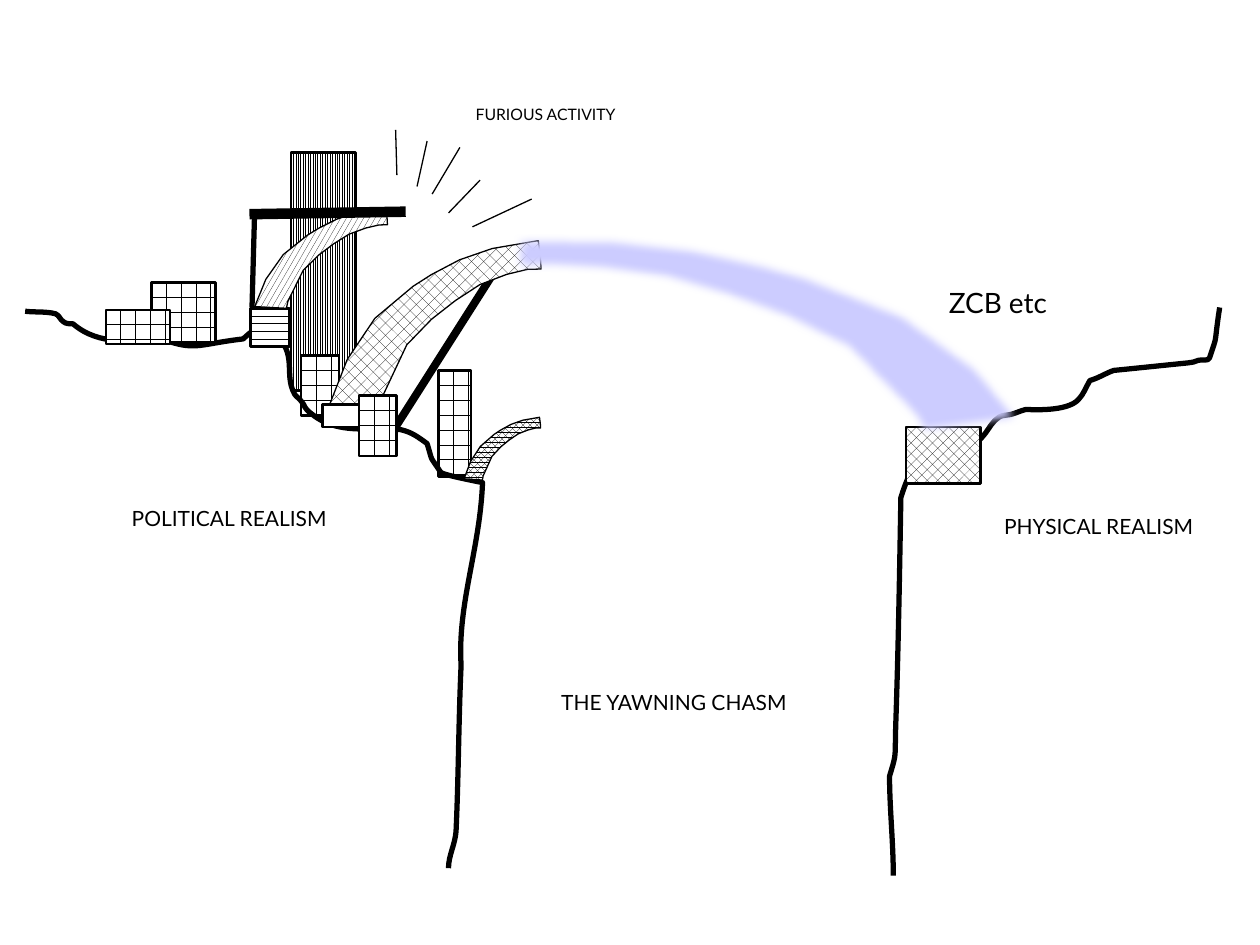
from lxml.etree import SubElement
from pptx import Presentation
from pptx.dml.color import RGBColor
from pptx.enum.dml import MSO_PATTERN
from pptx.enum.shapes import MSO_CONNECTOR, MSO_SHAPE
from pptx.enum.text import MSO_ANCHOR, PP_ALIGN
from pptx.oxml.ns import qn
from pptx.util import Inches, Pt

BLACK = RGBColor(0, 0, 0)
WHITE = RGBColor(255, 255, 255)
LILAC = RGBColor(0xCC, 0xCC, 0xFF)
BRICK = MSO_PATTERN.HORIZONTAL_BRICK
TILT = -3.4

# Half arch in percent of its box, rising from the left foot to the right tip
ARCH = [
    (0, 96.2), (9.3, 68.1), (23, 43.1), (41.3, 24.2), (49.8, 17.6),
    (63.1, 9.2), (78.3, 3.3), (99.5, 0), (100, 10.4), (100, 18.1),
    (93.8, 17.8), (84.2, 20.2), (71.7, 25.7), (60.1, 34.9), (48.8, 45.8),
    (36.8, 61.1), (24.3, 93), (23, 100),
]

# Cliff edges: a start point, then three points for each curve
LEFT = [
    (0.2, 2.47),
    (0.28, 2.48), (0.36, 2.47), (0.44, 2.49),
    (0.47, 2.5), (0.48, 2.54), (0.5, 2.55),
    (0.52, 2.57), (0.55, 2.57), (0.58, 2.57),
    (0.79, 2.75), (1.05, 2.7), (1.34, 2.71),
    (1.56, 2.78), (1.59, 2.73), (1.93, 2.69),
    (2.01, 2.62), (2.01, 2.6), (2.14, 2.65),
    (2.18, 2.67), (2.25, 2.73), (2.25, 2.73),
    (2.33, 2.85), (2.27, 2.99), (2.33, 3.11),
    (2.34, 3.14), (2.36, 3.15), (2.38, 3.17),
    (2.44, 3.24), (2.4, 3.23), (2.48, 3.29),
    (2.68, 3.45), (2.92, 3.39), (3.18, 3.41),
    (3.27, 3.43), (3.32, 3.47), (3.39, 3.52),
    (3.44, 3.68), (3.4, 3.6), (3.5, 3.75),
    (3.52, 3.77), (3.83, 3.83), (3.83, 3.83),
    (3.81, 4.36), (3.63, 4.79), (3.66, 5.28),
    (3.64, 5.72), (3.64, 6.16), (3.62, 6.6),
    (3.61, 6.71), (3.56, 6.79), (3.56, 6.89),
]
RIGHT = [
    (9.68, 2.44),
    (9.63, 2.77), (9.67, 2.63), (9.6, 2.84),
    (9.59, 2.87), (9.54, 2.85), (9.51, 2.86),
    (9.48, 2.87), (9.46, 2.88), (9.43, 2.88),
    (9.23, 2.9), (9.04, 2.92), (8.84, 2.94),
    (8.78, 2.96), (8.72, 3), (8.65, 3.02),
    (8.62, 3.07), (8.6, 3.13), (8.56, 3.17),
    (8.47, 3.27), (8.19, 3.25), (8.14, 3.25),
    (8.1, 3.26), (8.06, 3.28), (8.02, 3.29),
    (7.99, 3.3), (7.96, 3.29), (7.93, 3.31),
    (7.88, 3.34), (7.85, 3.4), (7.82, 3.44),
    (7.72, 3.56), (7.8, 3.45), (7.7, 3.54),
    (7.68, 3.56), (7.67, 3.59), (7.64, 3.6),
    (7.53, 3.62), (7.42, 3.61), (7.3, 3.62),
    (7.23, 3.73), (7.19, 3.82), (7.15, 3.95),
    (7.14, 4.54), (7.13, 5.14), (7.11, 5.73),
    (7.1, 6.04), (7.12, 5.96), (7.06, 6.16),
    (7.06, 6.41), (7.09, 6.69), (7.09, 6.95),
]


class Sketch:
    """Draws black ink and hatched shapes on one slide."""

    font = "Lato"

    def __init__(self, slide):
        self.slide = slide
        self.shapes = slide.shapes

    def ink(self, shape, fill, width):
        """Fill with a colour, a pattern or nothing; draw the outline."""
        shape.shadow.inherit = False
        if fill is None:
            shape.fill.background()
        elif isinstance(fill, RGBColor):
            shape.fill.solid()
            shape.fill.fore_color.rgb = fill
        else:
            shape.fill.patterned()
            shape.fill.pattern = fill
            shape.fill.fore_color.rgb = BLACK
            shape.fill.back_color.rgb = WHITE
        if width:
            shape.line.color.rgb = BLACK
            shape.line.width = Pt(width)
        else:
            shape.line.fill.background()
        return shape

    def block(self, x, y, w, h, fill=BRICK, width=1.5):
        box = self.shapes.add_shape(
            MSO_SHAPE.RECTANGLE, Inches(x), Inches(y), Inches(w), Inches(h))
        return self.ink(box, fill, width)

    def label(self, x, y, w, h, text, size):
        frame = self.block(x, y, w, h, WHITE, 0).text_frame
        frame.text = text
        frame.word_wrap = True
        frame.vertical_anchor = MSO_ANCHOR.TOP
        para = frame.paragraphs[0]
        para.alignment = PP_ALIGN.CENTER
        font = para.runs[0].font
        font.name, font.size, font.color.rgb = self.font, Pt(size), BLACK

    def stroke(self, x1, y1, x2, y2, width=0.75):
        line = self.shapes.add_connector(
            MSO_CONNECTOR.STRAIGHT,
            Inches(x1), Inches(y1), Inches(x2), Inches(y2))
        line.line.color.rgb = BLACK
        line.line.width = Pt(width)
        SubElement(line._element.spPr, qn("a:effectLst"))

    def form(self, spots, fill, width, close):
        first, *rest = [(Inches(x), Inches(y)) for x, y in spots]
        pen = self.shapes.build_freeform(*first)
        pen.add_line_segments(rest, close=close)
        return self.ink(pen.convert_to_shape(), fill, width)

    def cliff(self, spots):
        """Turn each three line steps into one curve."""
        shape = self.form(spots, None, 3, False)
        steps = list(shape._element.iter(qn("a:lnTo")))
        for i in range(0, len(steps), 3):
            curve = SubElement(steps[i].getparent(), qn("a:cubicBezTo"))
            for step in steps[i:i + 3]:
                curve.append(step[0])
                step.getparent().remove(step)

    def arch(self, x, y, w, h, fill, width=0.75, flip=False):
        spots = [(x + w * (100 - u if flip else u) / 100, y + h * v / 100)
                 for u, v in ARCH]
        shape = self.form(spots, fill, width, True)
        shape.rotation = TILT
        return shape

    def blur(self, shape, size):
        glow = shape._element.spPr.find(qn("a:effectLst"))
        SubElement(glow, qn("a:softEdge"), rad=str(Pt(size)))


def main():
    deck = Presentation()
    deck.slide_width, deck.slide_height = Inches(10), Inches(7.5)
    art = Sketch(deck.slides.add_slide(deck.slide_layouts[6]))

    # Tower, strut and rear blocks
    art.block(2.31, 1.21, 0.51, 1.89, MSO_PATTERN.LIGHT_VERTICAL)
    art.stroke(3.96, 2.1, 3.12, 3.42, 4.5)
    art.block(3.48, 2.94, 0.26, 0.84)
    art.block(2.39, 2.82, 0.3, 0.48)

    # Both sides of the chasm
    art.cliff(LEFT)
    art.cliff(RIGHT)

    # Half-built arches and their blocks
    art.arch(2.58, 1.96, 1.74, 1.25, MSO_PATTERN.PERCENT_30)
    art.block(2.56, 3.21, 0.51, 0.18, WHITE)
    art.block(1.99, 2.45, 0.31, 0.3, MSO_PATTERN.DASHED_HORIZONTAL)
    art.block(1.2, 2.24, 0.51, 0.48)
    art.arch(2, 1.68, 1.09, 0.75, MSO_PATTERN.LARGE_CONFETTI)
    art.arch(3.67, 3.33, 0.63, 0.47, MSO_PATTERN.PERCENT_75)
    art.block(0.84, 2.46, 0.51, 0.27)
    art.block(2.85, 3.14, 0.3, 0.48)

    # Labels
    art.label(4.13, 5.42, 2.44, 1.28, "THE YAWNING CHASM", 12)
    art.label(0.73, 3.96, 2.18, 1, "POLITICAL REALISM", 12)
    art.label(7.63, 4.03, 2.18, 1, "PHYSICAL REALISM", 12)
    art.label(3.38, 0.78, 1.9, 0.75, "FURIOUS ACTIVITY", 9)

    # Rays of activity
    for ray in [(3.31, 1.48, 3.39, 1.12), (3.56, 1.69, 3.81, 1.43),
                (3.75, 1.8, 4.22, 1.58), (3.43, 1.54, 3.65, 1.17),
                (3.15, 1.39, 3.14, 1.03)]:
        art.stroke(*ray)

    # Far footing, crane and the hazy span
    art.label(6.97, 2.22, 1.9, 0.49, "ZCB etc", 16)
    art.block(7.19, 3.39, 0.59, 0.45, MSO_PATTERN.WEAVE)
    art.stroke(2, 2.44, 2.02, 1.72, 3)
    art.stroke(3.22, 1.68, 1.98, 1.7, 6)
    span = art.arch(4.11, 1.73, 4.05, 1.82, LILAC, 0, flip=True)
    art.blur(span, 5)

    deck.save("out.pptx")


if __name__ == "__main__":
    main()
